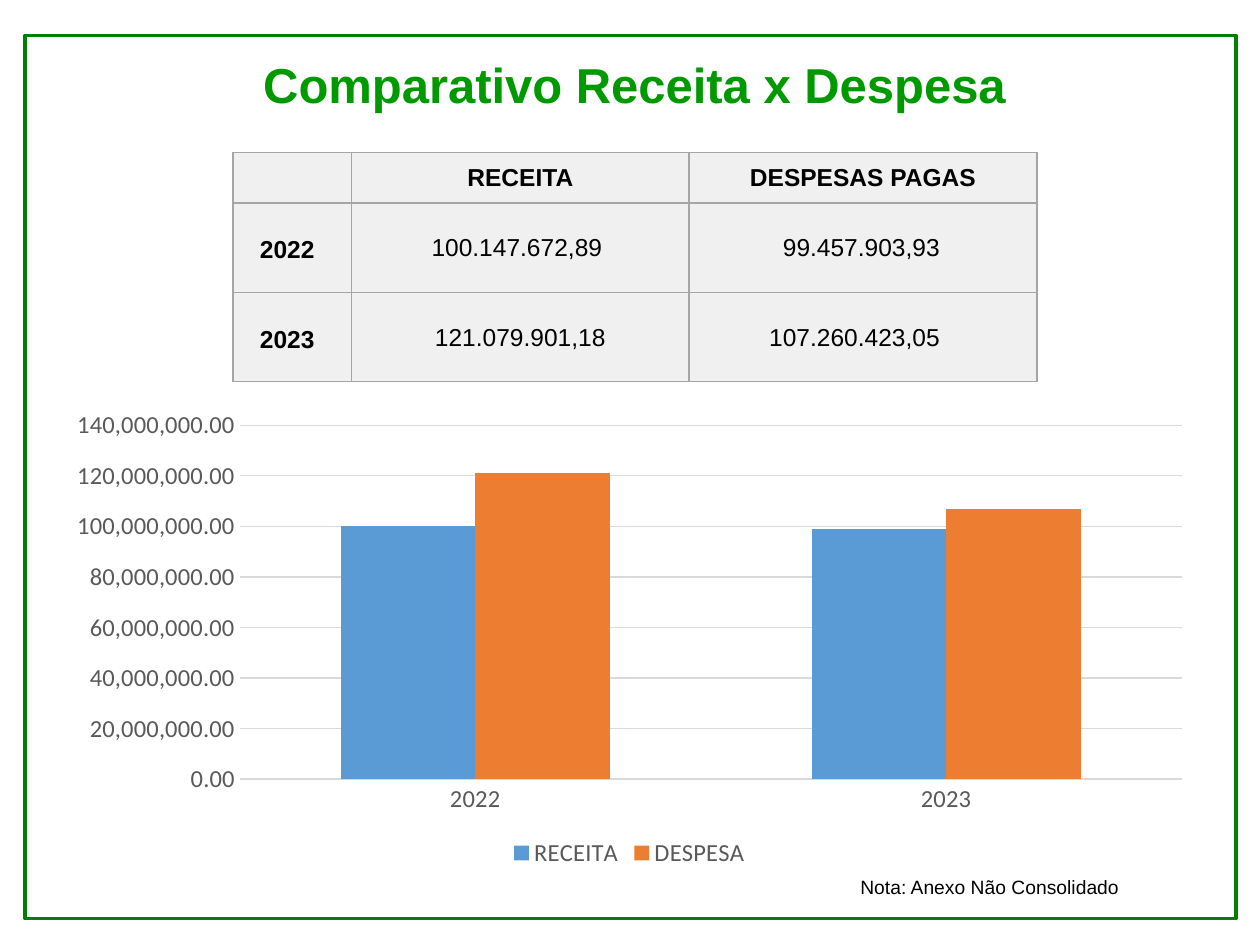
"""Build the slide comparing revenue and expenses for 2022 and 2023."""
from lxml import etree
from pptx import Presentation
from pptx.chart.data import CategoryChartData
from pptx.dml.color import RGBColor
from pptx.enum.chart import XL_CHART_TYPE, XL_LEGEND_POSITION, XL_TICK_MARK
from pptx.enum.shapes import MSO_SHAPE
from pptx.enum.text import MSO_ANCHOR, PP_ALIGN
from pptx.oxml.ns import qn
from pptx.util import Inches, Pt

COLUMN = XL_CHART_TYPE.COLUMN_CLUSTERED
BOTTOM = XL_LEGEND_POSITION.BOTTOM
NO_TICK = XL_TICK_MARK.NONE
RECTANGLE = MSO_SHAPE.RECTANGLE
MIDDLE = MSO_ANCHOR.MIDDLE
CENTER, LEFT = PP_ALIGN.CENTER, PP_ALIGN.LEFT


def color(value):
    """Turn a hex string into a colour."""
    return RGBColor.from_string(value)


def write(frame, text, size, bold=False, ink="000000", align=CENTER):
    """Put one formatted run in a text frame."""
    frame.word_wrap = True
    para = frame.paragraphs[0]
    para.alignment = align
    span = para.add_run()
    span.text = text
    span.font.name = "Arial"
    span.font.size = Pt(size)
    span.font.bold = bold
    span.font.color.rgb = color(ink)


deck = Presentation()
deck.slide_width, deck.slide_height = Inches(10), Inches(7.5)
page = deck.slides.add_slide(deck.slide_layouts[6])

border = page.shapes.add_shape(
    RECTANGLE, Inches(0.2), Inches(0.28), Inches(9.61), Inches(7.01))
border.shadow.inherit = False
border.fill.background()
border.line.color.rgb = color("008000")
border.line.width = Pt(2)

title = page.shapes.add_textbox(Inches(1.06), Inches(0.38), Inches(7.95), Inches(0.57))
write(title.text_frame, "Comparativo Receita x Despesa", 28, True, "009900")

rows = [
    ["", "RECEITA", "DESPESAS PAGAS"],
    ["2022", "100.147.672,89 ", " 99.457.903,93"],
    ["2023", "121.079.901,18", "107.260.423,05 "],
]
table = page.shapes.add_table(
    3, 3, Inches(1.85), Inches(1.21), Inches(6.38), Inches(1.82)).table
for column, width in zip(table.columns, [0.94, 2.68, 2.76]):
    column.width = Inches(width)
for row, height in zip(table.rows, [0.4, 0.71, 0.71]):
    row.height = Inches(height)
for r, texts in enumerate(rows):
    for c, text in enumerate(texts):
        cell = table.cell(r, c)
        cell.vertical_anchor = MIDDLE
        cell.margin_left = Inches(0.01)
        cell.margin_right = Inches(0.09 if r and c != 1 else 0.01)
        cell.margin_top = Inches(0.04 if r and c == 0 else 0.01)
        cell.margin_bottom = Inches(0)
        properties = cell._tc.get_or_add_tcPr()
        for side in ["a:lnL", "a:lnR", "a:lnT", "a:lnB"]:
            edge = etree.SubElement(properties, qn(side), w=str(Pt(1)))
            paint = etree.SubElement(edge, qn("a:solidFill"))
            etree.SubElement(paint, qn("a:srgbClr"), val="A5A5A5")
        cell.fill.solid()
        cell.fill.fore_color.rgb = color("F0F0F0")
        if text:
            write(cell.text_frame, text, 14, r == 0 or c == 0)

data = CategoryChartData(number_format="#,##0.00")
data.categories = ["2022", "2023"]
data.add_series("RECEITA", [100000000, 99000000])
data.add_series("DESPESA", [121000000, 107000000])
chart = page.shapes.add_chart(
    COLUMN, Inches(0.43), Inches(3.18), Inches(9.13), Inches(3.75), data).chart
chart.has_title = False
chart.font.name = "Calibri"
chart.font.size = Pt(10)
chart.font.color.rgb = color("000000")
chart.has_legend = True
chart.legend.position = BOTTOM
chart.legend.include_in_layout = False

plot = chart.plots[0]
plot.gap_width = 150
plot.overlap = 0
plot.vary_by_categories = False
for series, fill in zip(plot.series, ["5B9BD5", "ED7D31"]):
    series.format.fill.solid()
    series.format.fill.fore_color.rgb = color(fill)

values = chart.value_axis
for axis in [chart.category_axis, values]:
    axis.major_tick_mark = axis.minor_tick_mark = NO_TICK
    axis.format.line.fill.background()
for font in [chart.category_axis.tick_labels.font, values.tick_labels.font,
             chart.legend.font]:
    font.name = "Calibri"
    font.size = Pt(14)
    font.color.rgb = color("595959")
values.minimum_scale, values.maximum_scale = 0, 140000000
values.major_unit = 20000000
values.tick_labels.number_format = "#,##0.00"
values.tick_labels.number_format_is_linked = False
values.major_gridlines.format.line.color.rgb = color("D9D9D9")
values.major_gridlines.format.line.width = Pt(0.75)

note = page.shapes.add_textbox(Inches(6.73), Inches(6.9), Inches(2.6), Inches(0.29))
write(note.text_frame, "Nota: Anexo Não Consolidado", 11, align=LEFT)

deck.save("out.pptx")
